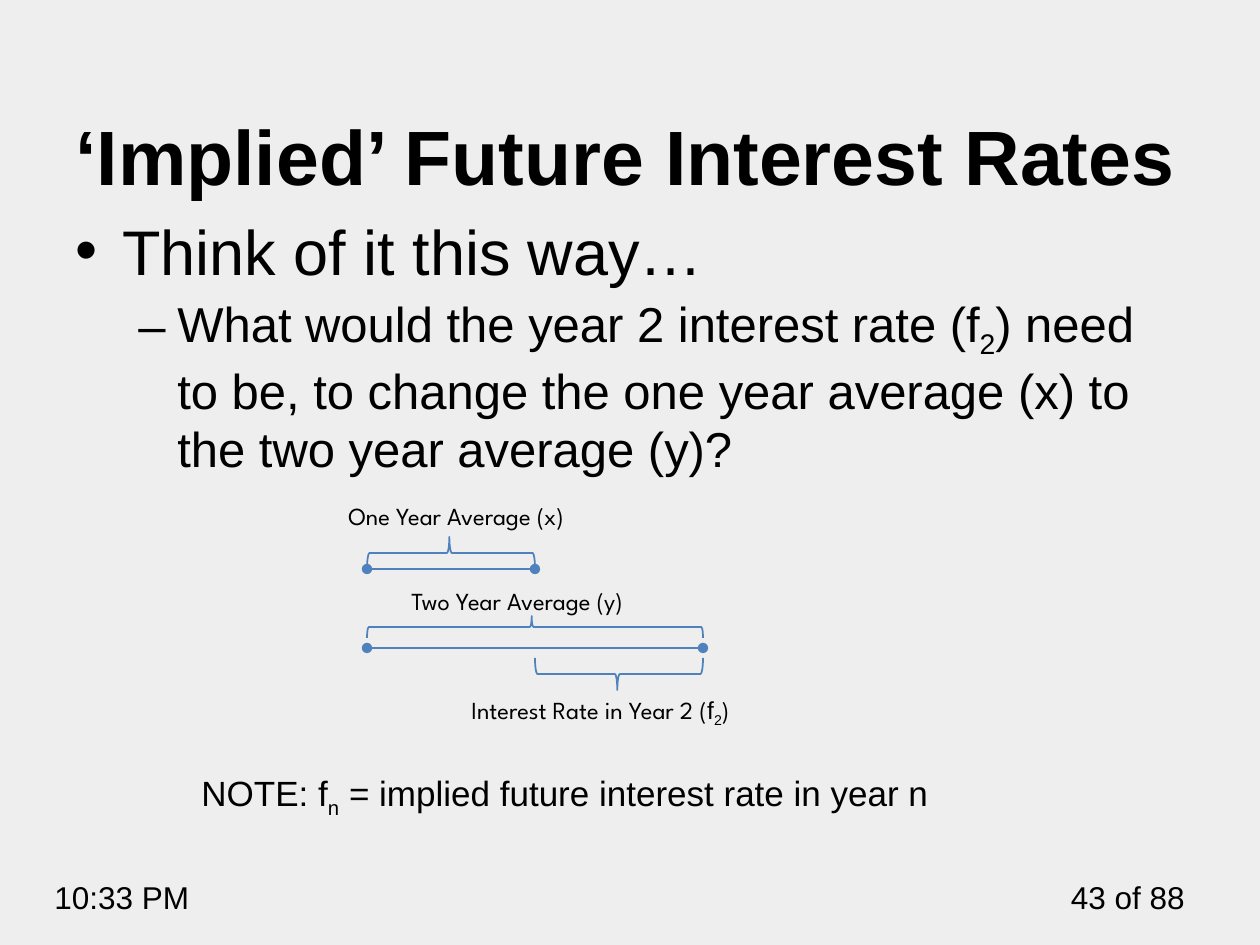
from lxml.etree import SubElement
from pptx import Presentation
from pptx.dml.color import RGBColor
from pptx.enum.shapes import MSO_CONNECTOR as Connector, MSO_SHAPE as Shape
from pptx.enum.text import MSO_ANCHOR as Anchor, PP_ALIGN as Align
from pptx.oxml.ns import qn
from pptx.util import Pt

PX = 914400 // 126
BLACK = RGBColor(0x00, 0x00, 0x00)
BLUE = RGBColor(0x4F, 0x81, 0xBD)
GREY = RGBColor(0xEE, 0xEE, 0xEE)
BODY_FONT = "Arial"
LABEL_FONT = "League Spartan"
START_X = 367
YEAR = 168


def scale(*lengths):
    return [length * PX for length in lengths]


def add_run(paragraph, text, size, font=BODY_FONT, bold=False, subscript=False):
    run = paragraph.add_run()
    run.text = text
    run.font.name = font
    run.font.size = Pt(size)
    run.font.bold = bold
    run.font.color.rgb = BLACK
    if subscript:
        run.font._element.set("baseline", "-25000")


def add_text(slide, box, runs, size, font=BODY_FONT, align=Align.LEFT):
    frame = slide.shapes.add_textbox(*scale(*box)).text_frame
    frame.word_wrap = True
    paragraph = frame.paragraphs[0]
    paragraph.alignment = align
    for text, options in runs:
        add_run(paragraph, text, size, **{"font": font, **options})
    return frame


def set_indent(paragraph, left, hanging=0, bullet=None):
    properties = paragraph._element.get_or_add_pPr()
    properties.set("marL", str(left * PX))
    properties.set("indent", str(-hanging * PX))
    if bullet:
        SubElement(properties, qn("a:buFont"), typeface=BODY_FONT)
        SubElement(properties, qn("a:buChar"), char=bullet)


def add_title(slide, text):
    title = slide.shapes.title
    title.left, title.top, title.width, title.height = scale(63, 49, 1134, 158)
    frame = title.text_frame
    frame.vertical_anchor = Anchor.BOTTOM
    frame.paragraphs[0].alignment = Align.LEFT
    add_run(frame.paragraphs[0], text, 44, bold=True)


def add_body(slide):
    frame = add_text(slide, (63, 206, 1134, 638), [("Think of it this way…", {})], 36)
    set_indent(frame.paragraphs[0], 47, 47, "•")

    question = frame.add_paragraph()
    question.level = 1
    question.space_before = Pt(3)
    set_indent(question, 102, 39, "–")
    add_run(question, "What would the year 2 interest rate (f", 28)
    add_run(question, "2", 28, subscript=True)
    add_run(question, ") need to be, to change the one year average (x) to "
            "the two year average (y)?", 28)

    note = frame.add_paragraph()
    note.level = 2
    note.space_before = Pt(168)
    set_indent(note, 126)
    add_run(note, "NOTE: f", 20)
    add_run(note, "n", 20, subscript=True)
    add_run(note, " = implied future interest rate in year n", 20)


def add_span(slide, years, y):
    line = slide.shapes.add_connector(
        Connector.STRAIGHT, *scale(START_X, y, START_X + years * YEAR, y))
    line.line.color.rgb = BLUE
    line.line.width = Pt(1)
    outline = line.line._get_or_add_ln()
    for end in ("a:headEnd", "a:tailEnd"):
        SubElement(outline, qn(end), type="oval")
    SubElement(line._element.spPr, qn("a:effectLst"))


def add_brace(slide, first_year, years, top, depth, upward):
    width = years * YEAR
    left = START_X + first_year * YEAR + (width - depth) // 2
    brace = slide.shapes.add_shape(
        Shape.LEFT_BRACE, *scale(left, top - (width - depth) // 2, depth, width))
    brace.adjustments[0] = 0.08
    brace.adjustments[1] = 0.49
    brace.rotation = 270
    if upward:
        brace._element.spPr.xfrm.set("flipH", "1")
    brace.fill.background()
    brace.line.color.rgb = BLUE
    brace.line.width = Pt(1)
    brace.shadow.inherit = False


def add_diagram(slide):
    add_span(slide, 1, 569)
    add_span(slide, 2, 648)
    add_brace(slide, 0, 2, 616, 22, True)
    add_brace(slide, 0, 1, 537, 32, True)
    add_brace(slide, 1, 1, 658, 32, False)
    rate_runs = [
        ("Interest Rate in Year 2 (", {}),
        ("f", {"font": BODY_FONT}),
        ("2", {"font": BODY_FONT, "subscript": True}),
        (")", {}),
    ]
    labels = [
        ((336, 495, 301, 43), [("One Year Average (x)", {})]),
        ((459, 689, 325, 43), rate_runs),
        ((399, 580, 290, 43), [("Two Year Average (y)", {})]),
    ]
    for box, runs in labels:
        add_text(slide, box, runs, 14, LABEL_FONT)


def main():
    presentation = Presentation()
    presentation.slide_width, presentation.slide_height = scale(1260, 945)
    slide = presentation.slides.add_slide(presentation.slide_layouts[5])
    slide.background.fill.solid()
    slide.background.fill.fore_color.rgb = GREY
    add_text(slide, (1008, 872, 189, 50), [("43 of 88", {})], 18, align=Align.RIGHT)
    add_text(slide, (42, 872, 199, 50), [("10:33 PM", {})], 18)
    add_body(slide)
    add_title(slide, "‘Implied’ Future Interest Rates")
    add_diagram(slide)
    presentation.save("out.pptx")


if __name__ == "__main__":
    main()
